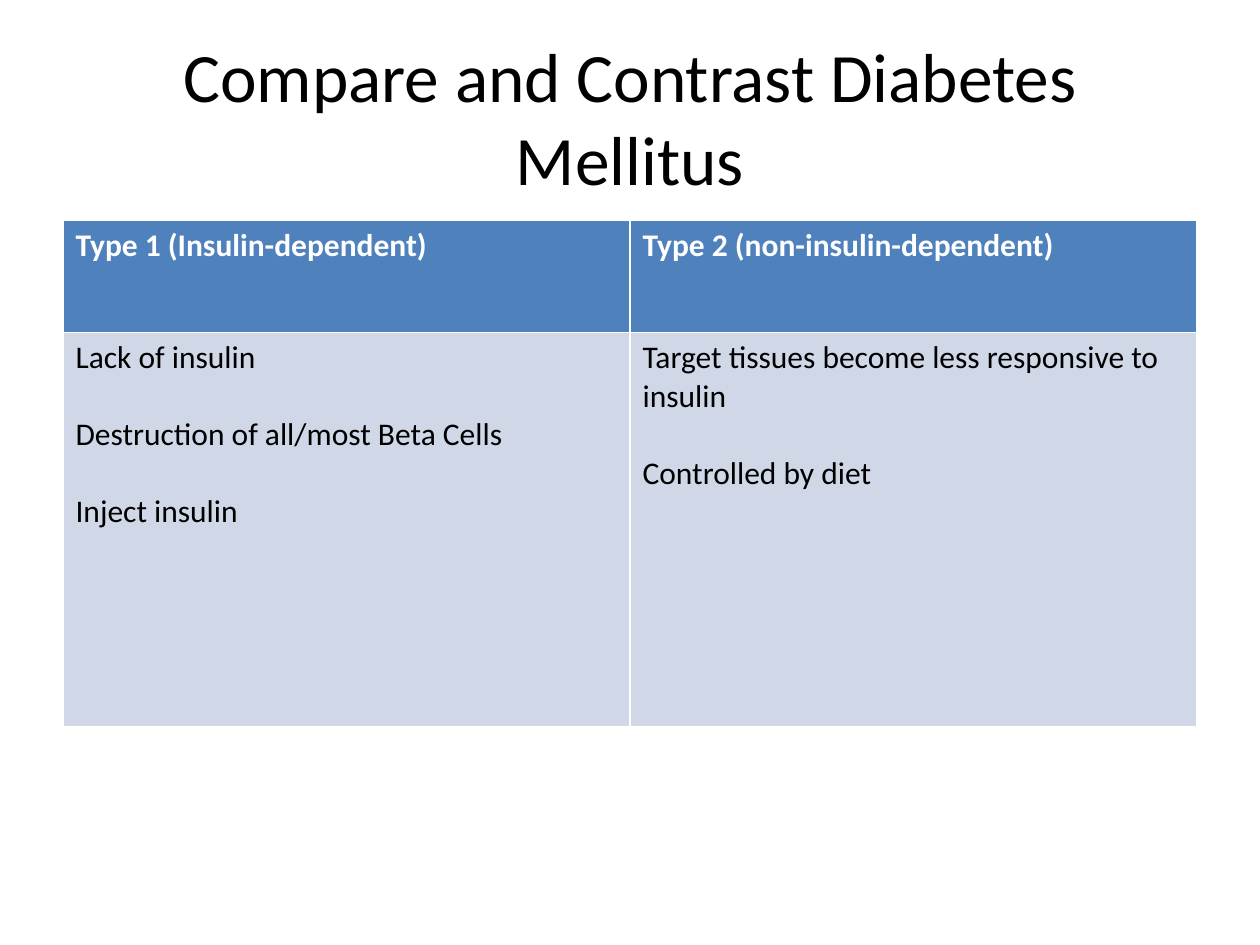
from pptx import Presentation
from pptx.dml.color import RGBColor
from pptx.enum import text
from pptx.util import Inches, Pt

COLORS = {"ink": "000000", "header_text": "FFFFFF", "header": "4F81BD", "body": "D0D8E8"}
FONT = "Calibri"


def set_font(paragraph, size, color, bold=False):
    font = paragraph.font
    font.name, font.size, font.bold = FONT, Pt(size), bold
    font.color.rgb = RGBColor.from_string(COLORS[color])


presentation = Presentation()
presentation.slide_width, presentation.slide_height = Inches(10), Inches(7.5)
slide = presentation.slides.add_slide(presentation.slide_layouts[5])

# Title
title = slide.shapes.title
title.left, title.top, title.width, title.height = (
    Inches(0.5), Inches(0.3), Inches(9), Inches(1.25))
title.text_frame.text = "Compare and Contrast Diabetes Mellitus"
title.text_frame.auto_size = text.MSO_AUTO_SIZE.NONE
title.text_frame.vertical_anchor = text.MSO_ANCHOR.MIDDLE
title.text_frame.paragraphs[0].alignment = text.PP_ALIGN.CENTER
set_font(title.text_frame.paragraphs[0], 39.6, "ink")

# Comparison table: heading and points for each type; the default style draws the white borders
diabetes_types = [
    ("Type 1 (Insulin-dependent)",
     ["Lack of insulin", "Destruction of all/most Beta Cells", "Inject insulin"]),
    ("Type 2 (non-insulin-dependent)",
     ["Target tissues become less responsive to insulin", "Controlled by diet"]),
]
table = slide.shapes.add_table(
    2, 2, Inches(0.5), Inches(1.75), Inches(9), Inches(4.02)).table
table.rows[0].height, table.rows[1].height = Inches(0.89), Inches(3.13)

for column, (heading, points) in enumerate(diabetes_types):
    table.columns[column].width = Inches(4.5)
    rows = [([heading], "header", "header_text", True), (points, "body", "ink", False)]
    for row, (lines, fill, color, bold) in enumerate(rows):
        cell = table.cell(row, column)
        cell.fill.solid()
        cell.fill.fore_color.rgb = RGBColor.from_string(COLORS[fill])
        cell.text_frame.text = "\n".join(lines)
        for index, paragraph in enumerate(cell.text_frame.paragraphs):
            set_font(paragraph, 18, color, bold)
            paragraph.space_before = Pt(22 if index else 0)

presentation.save("out.pptx")
